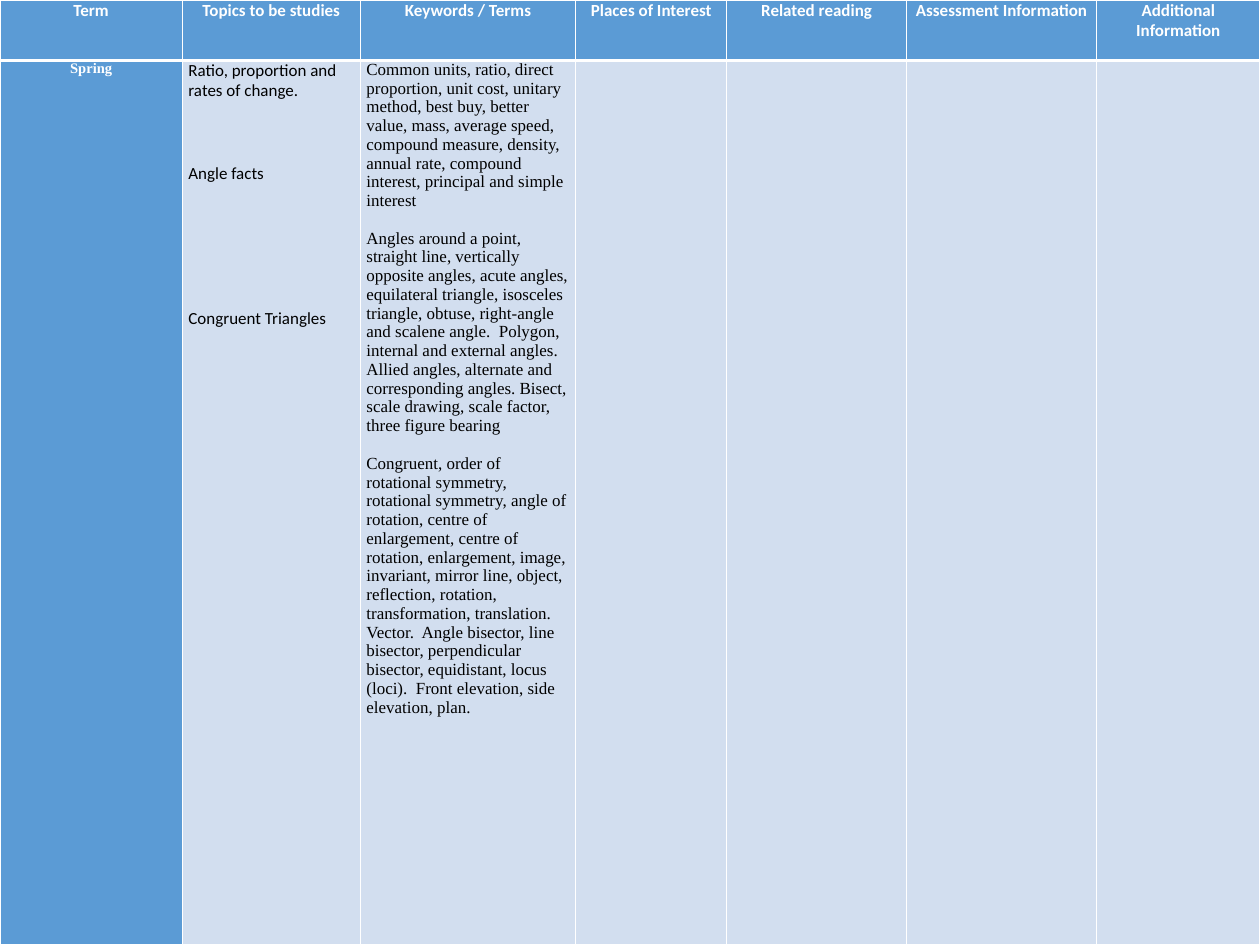
from lxml.etree import Element, SubElement
from pptx import Presentation
from pptx.dml.color import RGBColor
from pptx.enum.text import PP_ALIGN
from pptx.oxml.ns import qn
from pptx.util import Pt

PX = 9144  # 100 px to the inch
WIDTH, HEIGHT = 1444, 1083
WHITE = RGBColor(0xFF, 0xFF, 0xFF)
BLACK = RGBColor(0x00, 0x00, 0x00)
BLUE = RGBColor(0x5B, 0x9B, 0xD5)
PALE_BLUE = RGBColor(0xD2, 0xDE, 0xEF)
SANS, SERIF = "Calibri", "Times New Roman"

COLUMNS = [
    ("Term", 209),
    ("Topics to be studies", 204),
    ("Keywords / Terms", 247),
    ("Places of Interest", 173),
    ("Related reading", 206),
    ("Assessment Information", 218),
    ("Additional Information", 187),
]
HEADER_HEIGHT = 69

# Each entry is a paragraph and the space before it in points
TOPICS = [
    ("Ratio, proportion and rates of change.", 0),
    ("Angle facts", 51),
    ("Congruent Triangles", 102.5),
]
KEYWORDS = [
    ("Common units, ratio, direct proportion, unit cost, unitary method, best buy, "
     "better value, mass, average speed, compound measure, density, annual rate, "
     "compound interest, principal and simple interest", 0),
    ("Angles around a point, straight line, vertically opposite angles, acute angles, "
     "equilateral triangle, isosceles triangle, obtuse, right-angle and scalene angle.  "
     "Polygon, internal and external angles.  Allied angles, alternate and corresponding "
     "angles. Bisect, scale drawing, scale factor, three figure bearing", 15.5),
    ("Congruent, order of rotational symmetry, rotational symmetry, angle of rotation, "
     "centre of enlargement, centre of rotation, enlargement, image, invariant, mirror "
     "line, object, reflection, rotation, transformation, translation. Vector.  Angle "
     "bisector, line bisector, perpendicular bisector, equidistant, locus (loci).  Front "
     "elevation, side elevation, plan.", 15.5),
]


class CurriculumSlide:
    def __init__(self, deck):
        self.slide = deck.slides.add_slide(deck.slide_layouts[6])

    def table(self, widths, heights):
        grid = self.slide.shapes.add_table(
            len(heights), len(widths), 0, 0, sum(widths) * PX, sum(heights) * PX).table
        for column, width in zip(grid.columns, widths):
            column.width = width * PX
        for row, height in zip(grid.rows, heights):
            row.height = height * PX
        return grid

    def cell(self, cell, fill, inset, top=1, bottom=1):
        cell.fill.solid()
        cell.fill.fore_color.rgb = fill
        cell.margin_left = cell.margin_right = inset * PX
        cell.margin_top = cell.margin_bottom = 0
        sides = [("L", 1), ("R", 1), ("T", top), ("B", bottom)]
        for position, (side, points) in enumerate(sides):
            border = Element(qn(f"a:ln{side}"), w=str(Pt(points)))
            solid = SubElement(border, qn("a:solidFill"))
            SubElement(solid, qn("a:srgbClr"), val=str(WHITE))
            cell._tc.get_or_add_tcPr().insert(position, border)

    def text(self, cell, entries, font, size, color=BLACK, bold=False, align=PP_ALIGN.LEFT):
        frame = cell.text_frame
        frame.text = "\n".join(words for words, _ in entries)
        for paragraph, (_, gap) in zip(frame.paragraphs, entries):
            paragraph.alignment = align
            paragraph.space_before = Pt(gap)
            for run in paragraph.runs:
                run.font.name = font
                run.font.size = Pt(size)
                run.font.bold = bold
                run.font.color.rgb = color

    def heading(self, cell, words, font, size):
        self.text(cell, [(words, 0)], font, size, WHITE, True, PP_ALIGN.CENTER)


def main():
    deck = Presentation()
    deck.slide_width, deck.slide_height = WIDTH * PX, HEIGHT * PX
    page = CurriculumSlide(deck)
    plan = page.table([width for _, width in COLUMNS],
                      [HEADER_HEIGHT, HEIGHT - HEADER_HEIGHT])

    # Header row and cell styling
    for index, (title, _) in enumerate(COLUMNS):
        page.cell(plan.cell(0, index), BLUE, 5, bottom=3)
        page.heading(plan.cell(0, index), title, SANS, 14)
        page.cell(plan.cell(1, index), PALE_BLUE if index else BLUE, 7, top=3)

    # Spring term
    page.heading(plan.cell(1, 0), "Spring", SERIF, 12)
    page.text(plan.cell(1, 1), TOPICS, SANS, 14)
    page.text(plan.cell(1, 2), KEYWORDS, SERIF, 14)

    deck.save("out.pptx")


if __name__ == "__main__":
    main()
